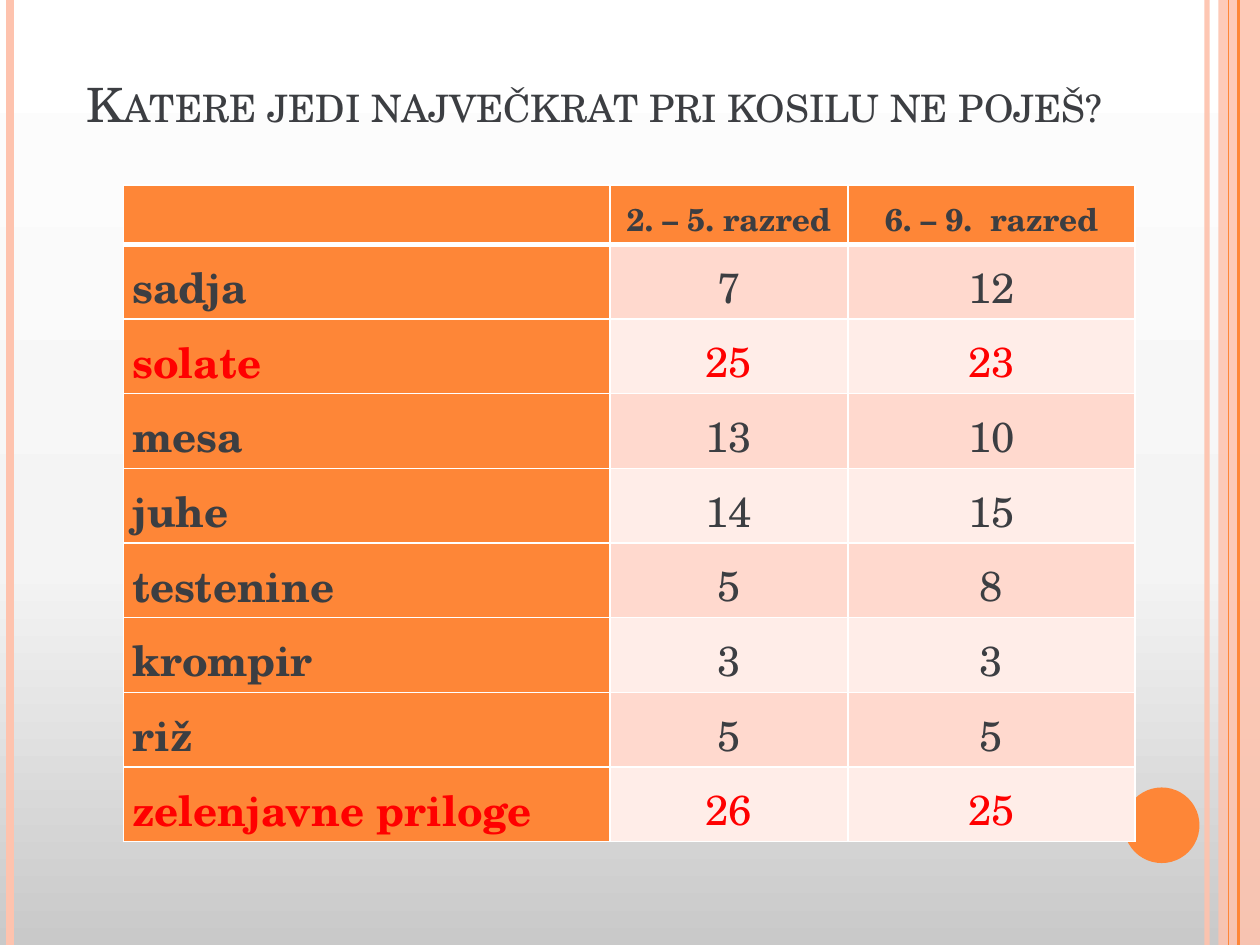
from copy import deepcopy
from dataclasses import dataclass
from typing import Any

from lxml import etree
from pptx import Presentation
from pptx import util as u
from pptx.dml.color import RGBColor
from pptx.enum import shapes, text
from pptx.oxml.ns import qn


@dataclass(frozen=True)
class Theme:
    font: str = "TeX Gyre Schola"
    ink: str = "3C3E42"
    alert: str = "FF0000"
    accent: str = "FE8637"
    peach: str = "FEC3AE"
    white: str = "FFFFFF"
    bands: tuple = ("FFD9CE", "FFEDE8")
    sky: tuple = ((0, "C9C9C9"), (0.4, "F4F4F4"), (1, "FFFFFF"))
    title: float = 27
    head: float = 18
    body: float = 24


@dataclass(frozen=True)
class Rule:
    x: float
    color: str
    width: float
    alpha: int = 100


@dataclass(frozen=True)
class Block:
    kind: Any
    box: tuple
    color: str
    alpha: int = 100


@dataclass(frozen=True)
class Food:
    name: str
    low: int
    high: int
    alert: bool = False


T = Theme()
WIDE, HIGH = 10, 7.5
RULES = (Rule(9.58, T.peach, 3, 93), Rule(0.08, T.peach, 4.5))
EDGES = (Rule(9.83, T.accent, 1.5), Rule(9.75, T.accent, 0.75))
BAND = Block(shapes.MSO_SHAPE.RECTANGLE, (9.67, 0, 0.33, HIGH), T.peach, 87)
DOT = Block(shapes.MSO_SHAPE.OVAL, (8.92, 6.25, 0.6, 0.6), T.accent)
HEADS = ("", "2. – 5. razred", "6. – 9.  razred")
FOODS = (
    Food("sadja", 7, 12),
    Food("solate", 25, 23, True),
    Food("mesa", 13, 10),
    Food("juhe", 14, 15),
    Food("testenine", 5, 8),
    Food("krompir", 3, 3),
    Food("riž", 5, 5),
    Food("zelenjavne priloge", 26, 25, True),
)
COLS = (3.86, 1.89, 2.28)
HEAD_ROW, FOOD_ROW = 0.47, 0.59


def apply(obj: Any, vals: dict) -> None:
    for key, val in vals.items():
        setattr(obj, key, val)


def paint(fill: Any, color: str) -> None:
    fill.solid()
    fill.fore_color.rgb = RGBColor.from_string(color)


def fade(shape: Any, alpha: int) -> None:
    """Set the opacity, in percent, of the first colour in a shape."""
    if alpha < 100:
        tone = shape._element.spPr.find(".//" + qn("a:srgbClr"))
        etree.SubElement(tone, qn("a:alpha"), val=str(alpha * 1000))


def write(para: Any, words: str, size: float, color: str, bold: bool) -> Any:
    run = para.add_run()
    run.text = words
    apply(run.font, {"name": T.font, "size": u.Pt(size), "bold": bold})
    run.font.color.rgb = RGBColor.from_string(color)
    return run


def draw_sky(slide: Any) -> None:
    fill = slide.background.fill
    fill.gradient()
    fill.gradient_angle = 90
    stops = slide._element.find(".//" + qn("a:gsLst"))
    stops.insert(1, deepcopy(stops[0]))
    for stop, (pos, color) in zip(fill.gradient_stops, T.sky):
        stop.position = pos
        stop.color.rgb = RGBColor.from_string(color)


def draw_rule(slide: Any, rule: Rule) -> None:
    x = u.Inches(rule.x)
    line = slide.shapes.add_connector(
        shapes.MSO_CONNECTOR.STRAIGHT, x, 0, x, u.Inches(HIGH))
    paint(line.line.fill, rule.color)
    line.line.width = u.Pt(rule.width)
    fade(line, rule.alpha)
    etree.SubElement(line._element.spPr, qn("a:effectLst"))


def draw_block(slide: Any, block: Block) -> None:
    shape = slide.shapes.add_shape(block.kind, *map(u.Inches, block.box))
    paint(shape.fill, block.color)
    shape.line.fill.background()
    shape.shadow.inherit = False
    fade(shape, block.alpha)


def draw_title(slide: Any, words: str) -> None:
    title = slide.shapes.title
    box = map(u.Inches, (0.59, 0.21, 8.36, 1.34))
    apply(title, dict(zip(("left", "top", "width", "height"), box)))
    frame = title.text_frame
    apply(frame, {"vertical_anchor": text.MSO_ANCHOR.BOTTOM, "word_wrap": True,
                  "auto_size": text.MSO_AUTO_SIZE.NONE,
                  "margin_bottom": u.Inches(0.5)})
    para = frame.paragraphs[0]
    para.alignment = text.PP_ALIGN.LEFT
    run = write(para, words, T.title, T.ink, False)
    run.font._element.set("cap", "small")


def edge(cell: Any, base: float) -> None:
    """Draw white borders; base is the width of the bottom one."""
    props = cell._tc.get_or_add_tcPr()
    sides = (("a:lnL", 1), ("a:lnR", 1), ("a:lnT", 1), ("a:lnB", base))
    for spot, (tag, width) in enumerate(sides):
        line = etree.Element(qn(tag), w=str(u.Pt(width)))
        fill = etree.SubElement(line, qn("a:solidFill"))
        etree.SubElement(fill, qn("a:srgbClr"), val=T.white)
        props.insert(spot, line)


def draw_table(slide: Any) -> None:
    rows = (HEAD_ROW,) + (FOOD_ROW,) * len(FOODS)
    box = map(u.Inches, (0.98, 1.47, sum(COLS), sum(rows)))
    table = slide.shapes.add_table(len(rows), len(COLS), *box).table
    for col, wide in zip(table.columns, COLS):
        col.width = u.Inches(wide)
    for row, high in zip(table.rows, rows):
        row.height = u.Inches(high)
    data = [HEADS] + [(f.name, f.low, f.high) for f in FOODS]
    for r, vals in enumerate(data):
        head = r == 0
        color = T.alert if r and FOODS[r - 1].alert else T.ink
        for c, val in enumerate(vals):
            cell = table.cell(r, c)
            label = head or c == 0
            apply(cell, {"margin_left": u.Inches(0.07),
                         "margin_right": u.Inches(0.07),
                         "margin_top": 0, "margin_bottom": 0,
                         "vertical_anchor": text.MSO_ANCHOR.MIDDLE})
            paint(cell.fill, T.accent if label else T.bands[(r - 1) % 2])
            edge(cell, 3 if head else 1)
            if val == "":
                continue
            para = cell.text_frame.paragraphs[0]
            align = text.PP_ALIGN.CENTER if head or c else text.PP_ALIGN.LEFT
            apply(para, {"alignment": align, "line_spacing": 1.15})
            write(para, str(val), T.head if head else T.body, color, label)


def main() -> None:
    deck = Presentation()
    apply(deck, {"slide_width": u.Inches(WIDE), "slide_height": u.Inches(HIGH)})
    slide = deck.slides.add_slide(deck.slide_layouts[5])
    draw_sky(slide)
    for rule in RULES:
        draw_rule(slide, rule)
    draw_block(slide, BAND)
    for rule in EDGES:
        draw_rule(slide, rule)
    draw_block(slide, DOT)
    draw_title(slide, "Katere jedi največkrat pri kosilu ne poješ?")
    draw_table(slide)
    deck.save("out.pptx")


if __name__ == "__main__":
    main()
